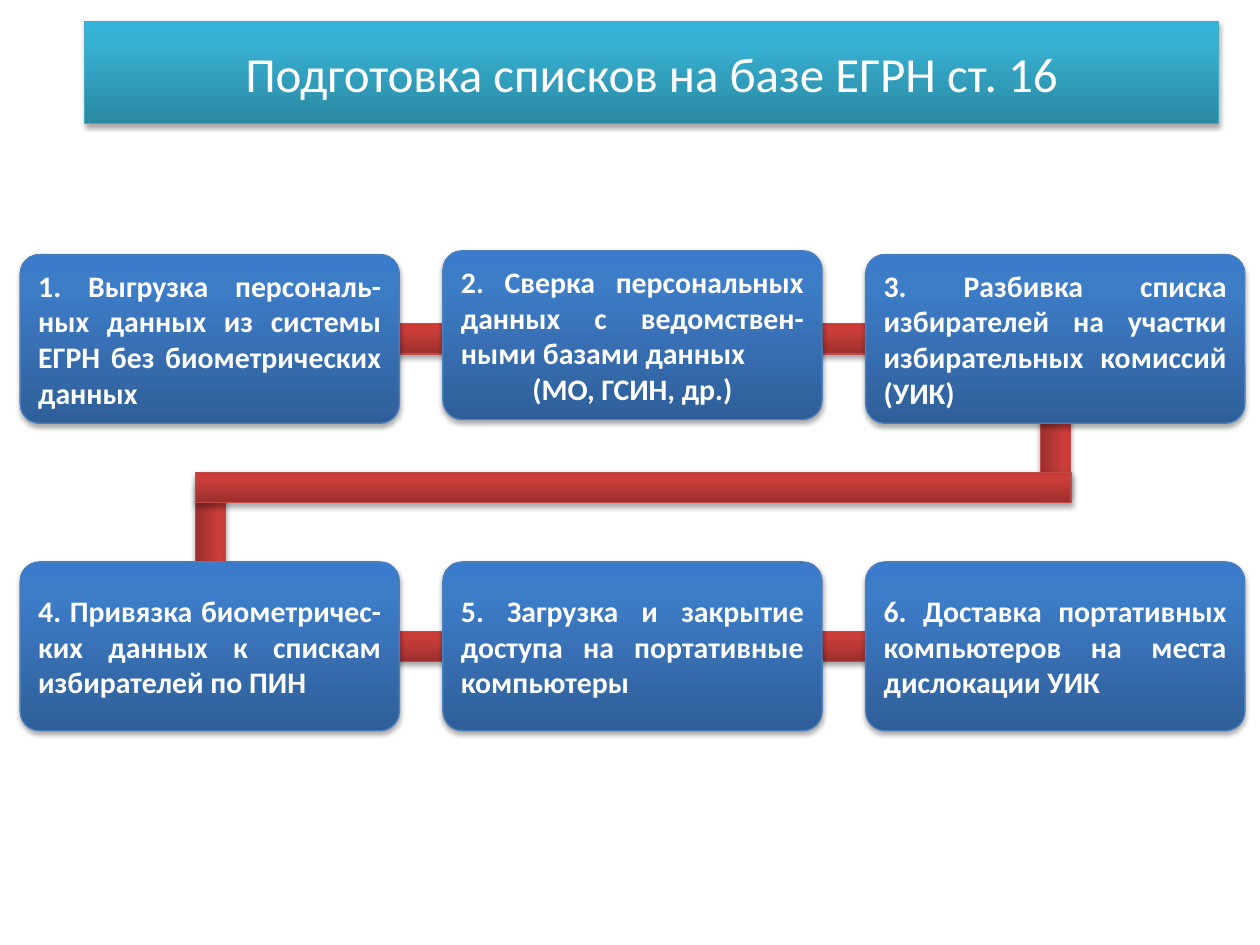
from copy import deepcopy

from lxml import etree
from pptx import Presentation
from pptx.dml.color import RGBColor
from pptx.enum.shapes import MSO_SHAPE
from pptx.enum.text import MSO_ANCHOR, MSO_AUTO_SIZE, PP_ALIGN
from pptx.oxml.ns import qn
from pptx.util import Inches, Pt

RECT, ROUNDED = MSO_SHAPE.RECTANGLE, MSO_SHAPE.ROUNDED_RECTANGLE
MIDDLE, NO_AUTOFIT = MSO_ANCHOR.MIDDLE, MSO_AUTO_SIZE.NONE
CENTER, JUSTIFY = PP_ALIGN.CENTER, PP_ALIGN.JUSTIFY
TITLE_ONLY = 5

WHITE = RGBColor(0xFF, 0xFF, 0xFF)
# Each palette: gradient from bottom to top, then the outline.
TEAL = (RGBColor(0x2A, 0x88, 0xA2), RGBColor(0x37, 0xB1, 0xD2),
        RGBColor(0x34, 0xB4, 0xD6), RGBColor(0x46, 0xAA, 0xC5))
RED = (RGBColor(0x9C, 0x2F, 0x2D), RGBColor(0xCB, 0x3E, 0x3A),
       RGBColor(0xCE, 0x3B, 0x37), RGBColor(0xBF, 0x4C, 0x48))
BLUE = (RGBColor(0x2F, 0x5F, 0x99), RGBColor(0x3D, 0x7C, 0xC7),
        RGBColor(0x3A, 0x7C, 0xCB), RGBColor(0x4B, 0x7E, 0xBC))
STOP_POSITIONS = (0, 0.8, 1)

STEP_LEFT, STEP_PITCH = 0.16, 3.355
STEP_WIDTH, STEP_HEIGHT = 3.01, 1.34
ROW_TOPS = (2.02, 4.46)
SECOND_STEP_LIFT = 0.03
BAR_THICKNESS, LINK_LENGTH = 0.24, 1.42

STEPS = [
    ["1. Выгрузка персональ-ных данных из системы ЕГРН без биометрических данных"],
    ["2. Сверка персональных данных с ведомствен-ными базами данных",
     "(МО, ГСИН, др.)"],
    ["3. Разбивка списка избирателей на участки избирательных комиссий (УИК)"],
    ["4. Привязка биометричес-ких данных к спискам избирателей по ПИН"],
    ["5. Загрузка и закрытие доступа на портативные компьютеры"],
    ["6. Доставка портативных компьютеров на места дислокации УИК"],
]
# left, top, length, rotation
LINKS = [
    (7.73, 3.17, 1.29, 90),
    (0.96, 4.42, LINK_LENGTH, 90),
    (6.02, 2.57, LINK_LENGTH, 0),
    (2.69, 5.01, LINK_LENGTH, 0),
    (6.16, 5.01, LINK_LENGTH, 0),
    (2.72, 2.57, LINK_LENGTH, 0),
]


def write(paragraph, text, size=17, bold=False, align=JUSTIFY):
    paragraph.alignment = align
    run = paragraph.add_run()
    run.text = text
    run.font.name = "Calibri"
    run.font.size = Pt(size)
    run.font.bold = bold
    run.font.color.rgb = WHITE


class FlowSlide:
    def __init__(self, slide):
        self.slide = slide

    def finish(self, shape, palette):
        """Apply the gradient, thin outline and soft shadow below the shape."""
        *gradient, outline = palette
        fill = shape.fill
        fill.gradient()
        fill.gradient_angle = 90
        properties = shape._element.spPr
        stop_list = properties.find(qn("a:gradFill")).find(qn("a:gsLst"))
        stop_list.append(deepcopy(stop_list[-1]))
        for stop, position, color in zip(fill.gradient_stops, STOP_POSITIONS, gradient):
            stop.position = position
            stop.color.rgb = color
        shape.line.color.rgb = outline
        shape.line.width = Pt(0.75)

        shape.shadow.inherit = False
        shadow = etree.SubElement(
            properties.find(qn("a:effectLst")), qn("a:outerShdw"),
            blurRad=str(Pt(3.1)), dist=str(Pt(1.8)), dir="5400000", rotWithShape="0")
        black = etree.SubElement(shadow, qn("a:srgbClr"), val="000000")
        etree.SubElement(black, qn("a:alpha"), val="35000")

    def title(self, text):
        heading = self.slide.shapes.title
        heading.left, heading.top = Inches(0.67), Inches(0.17)
        heading.width, heading.height = Inches(9), Inches(0.81)
        self.finish(heading, TEAL)
        frame = heading.text_frame
        frame.auto_size = NO_AUTOFIT
        frame.vertical_anchor = MIDDLE
        write(frame.paragraphs[0], text, size=28, align=CENTER)

    def bar(self, left, top, length, rotation=0):
        bar = self.slide.shapes.add_shape(
            RECT, Inches(left), Inches(top), Inches(length), Inches(BAR_THICKNESS))
        bar.rotation = rotation
        self.finish(bar, RED)

    def step(self, left, top, lines):
        """Draw a step: its first line justified, any further line centred."""
        box = self.slide.shapes.add_shape(
            ROUNDED, Inches(left), Inches(top), Inches(STEP_WIDTH), Inches(STEP_HEIGHT))
        box.adjustments[0] = 0.115
        self.finish(box, BLUE)
        frame = box.text_frame
        frame.word_wrap = True
        frame.vertical_anchor = MIDDLE
        write(frame.paragraphs[0], lines[0], bold=True)
        for line in lines[1:]:
            write(frame.add_paragraph(), line, bold=True, align=CENTER)


def main():
    deck = Presentation()
    deck.slide_width, deck.slide_height = Inches(10), Inches(7.5)
    flow = FlowSlide(deck.slides.add_slide(deck.slide_layouts[TITLE_ONLY]))

    flow.title("Подготовка списков на базе ЕГРН ст. 16")
    for link in LINKS:
        flow.bar(*link)
    for index, lines in enumerate(STEPS):
        row, column = divmod(index, 3)
        lift = SECOND_STEP_LIFT if index == 1 else 0
        flow.step(STEP_LEFT + column * STEP_PITCH, ROW_TOPS[row] - lift, lines)
    flow.bar(1.55, 3.75, 6.95)

    deck.save("out.pptx")


if __name__ == "__main__":
    main()
